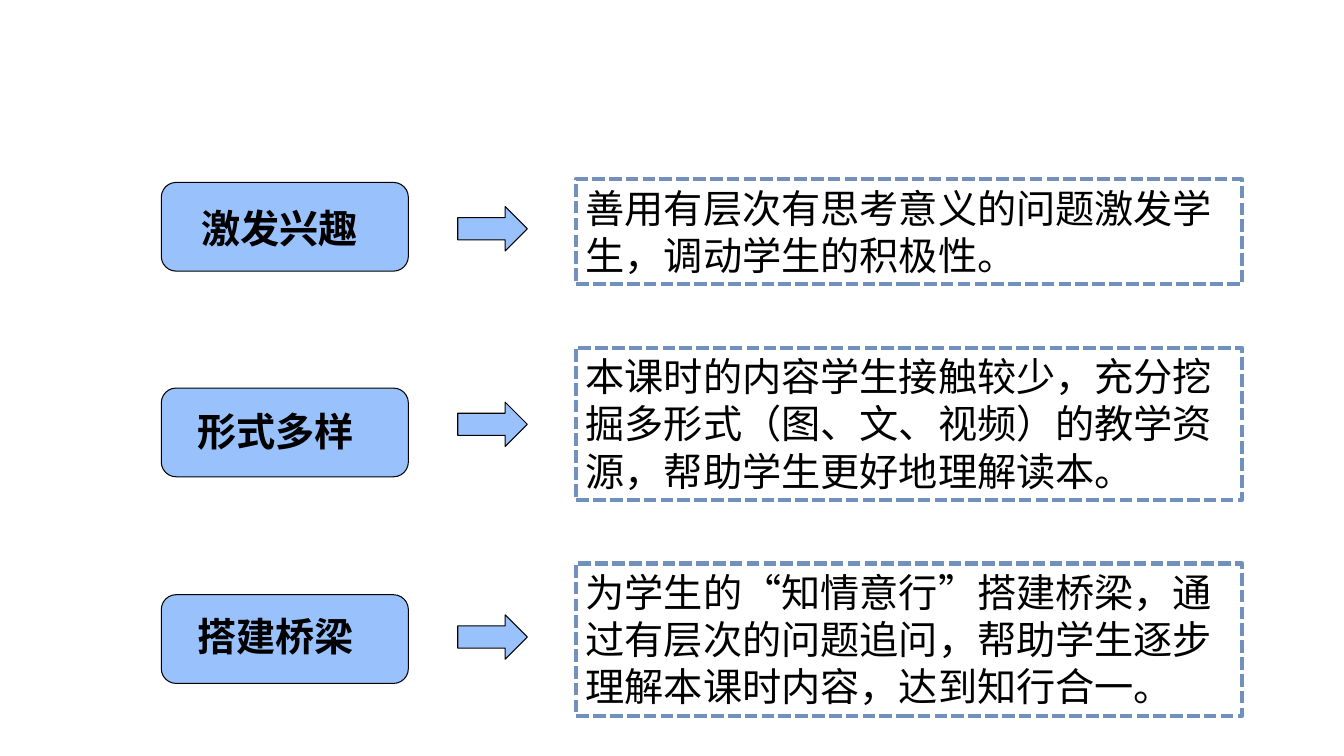
from pptx import Presentation
from pptx.dml.color import RGBColor
from pptx.enum.dml import MSO_LINE_DASH_STYLE as DASH
from pptx.enum.shapes import MSO_SHAPE as SHAPE
from pptx.enum.text import MSO_ANCHOR as ANCHOR, PP_ALIGN as ALIGN
from pptx.oxml.ns import qn
from pptx.util import Inches, Pt
from lxml import etree

FONT = "Noto Sans CJK SC"


def color(value):
    return RGBColor.from_string(value)


def write(shape, text, bold):
    frame = shape.text_frame
    frame.word_wrap = True
    frame.vertical_anchor = ANCHOR.TOP
    paragraph = frame.paragraphs[0]
    paragraph.alignment = ALIGN.LEFT
    run = paragraph.add_run()
    run.text = text
    for name, value in {"name": FONT, "size": Pt(28), "bold": bold}.items():
        setattr(run.font, name, value)
    run.font.color.rgb = color("000000")
    properties = run.font._element
    etree.SubElement(properties, qn("a:ea")).set("typeface", FONT)


presentation = Presentation()
presentation.slide_width = Inches(13.33)
presentation.slide_height = Inches(7.5)
slide = presentation.slides.add_slide(presentation.slide_layouts[6])

rows = [
    {"label": "激发兴趣", "label_at": (1.9, 1.98), "button_top": 1.81, "arrow_top": 2.05,
     "detail_top": 1.78, "detail_height": 1.04,
     "detail": "善用有层次有思考意义的问题激发学生，调动学生的积极性。"},
    {"label": "形式多样", "label_at": (1.86, 3.99), "button_top": 3.85, "arrow_top": 3.99,
     "detail_top": 3.45, "detail_height": 1.51,
     "detail": "本课时的内容学生接触较少，充分挖掘多形式（图、文、视频）的教学资源，帮助学生更好地理解读本。"},
    {"label": "搭建桥梁", "label_at": (1.86, 6.03), "button_top": 5.9, "arrow_top": 6.1,
     "detail_top": 5.59, "detail_height": 1.51,
     "detail": "为学生的“知情意行”搭建桥梁，通过有层次的问题追问，帮助学生逐步理解本课时内容，达到知行合一。"},
]

for row in rows:
    blue_shapes = [
        (SHAPE.ROUNDED_RECTANGLE, 1.6, row["button_top"], 2.45, 0.88),
        (SHAPE.RIGHT_ARROW, 4.54, row["arrow_top"], 0.69, 0.44),
    ]
    for kind, *box in blue_shapes:
        shape = slide.shapes.add_shape(kind, *map(Inches, box))
        shape.shadow.inherit = False
        shape.fill.solid()
        shape.fill.fore_color.rgb = color("99C2FD")
        shape.line.color.rgb = color("000000")
        shape.line.width = Pt(0.75)

    label = slide.shapes.add_textbox(*map(Inches, (*row["label_at"], 2.1, 0.57)))
    write(label, row["label"], True)

    box = (5.71, row["detail_top"], 6.61, row["detail_height"])
    detail = slide.shapes.add_shape(SHAPE.RECTANGLE, *map(Inches, box))
    detail.shadow.inherit = False
    detail.fill.background()
    detail.line.color.rgb = color("7190BB")
    detail.line.width = Pt(3)
    detail.line.dash_style = DASH.SQUARE_DOT
    write(detail, row["detail"], False)

presentation.save("out.pptx")
